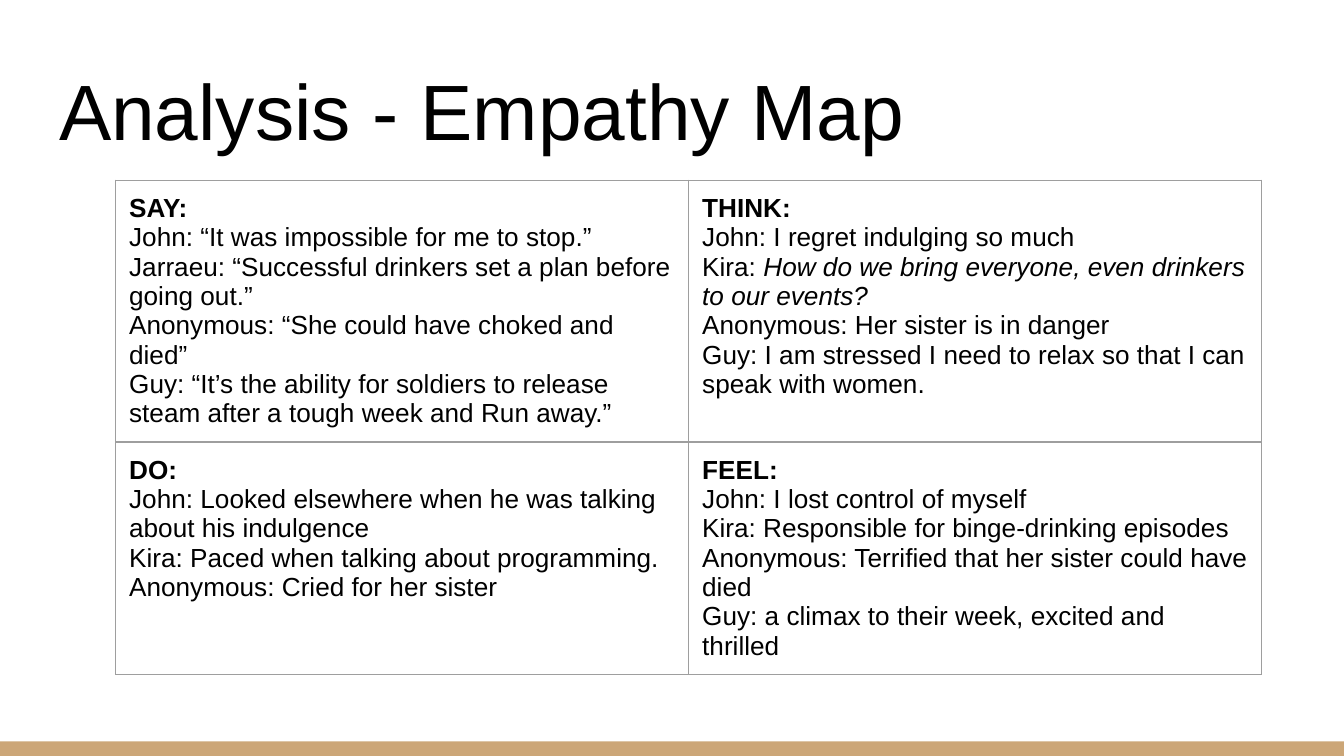
"""Build the empathy map slide: a title above a two-by-two table."""
from lxml import etree
from pptx import Presentation
from pptx import util as u
from pptx.dml import color
from pptx.enum import shapes, text
from pptx.oxml import ns

COLORS = {"ink": "000000", "band": "CCA677", "border": "9E9E9E"}
INSET = u.Pt(7.2)

EMPATHY = [
    [
        ("SAY:", [
            ("John: “It was impossible for me to stop.”", ""),
            ("Jarraeu: “Successful drinkers set a plan before going out.”", ""),
            ("Anonymous: “She could have choked and died”", ""),
            ("Guy: “It’s the ability for soldiers to release steam after a tough week and Run away.”", ""),
        ]),
        ("THINK:", [
            ("John: I regret indulging so much", ""),
            ("Kira: ", "How do we bring everyone, even drinkers to our events?"),
            ("Anonymous: Her sister is in danger", ""),
            ("Guy: I am stressed I need to relax so that I can speak with women.", ""),
        ]),
    ],
    [
        ("DO:", [
            ("John: Looked elsewhere when he was talking about his indulgence", ""),
            ("Kira: Paced when talking about programming.", ""),
            ("Anonymous: Cried for her sister", ""),
        ]),
        ("FEEL:", [
            ("John: I lost control of myself", ""),
            ("Kira: Responsible for binge-drinking episodes", ""),
            ("Anonymous: Terrified that her sister could have died", ""),
            ("Guy: a climax to their week, excited and thrilled", ""),
        ]),
    ],
]


def add_run(paragraph, words, size, bold=False, italic=False):
    run = paragraph.add_run()
    run.text = words
    run.font.name = "Arial"
    run.font.size = u.Pt(size)
    run.font.bold = bold
    run.font.italic = italic
    run.font.color.rgb = color.RGBColor.from_string(COLORS["ink"])


def add_borders(cell):
    properties = cell._tc.get_or_add_tcPr()
    for position, side in enumerate(("a:lnL", "a:lnR", "a:lnT", "a:lnB")):
        line = etree.Element(ns.qn(side), w=str(u.Pt(0.75)))
        fill = etree.SubElement(line, ns.qn("a:solidFill"))
        etree.SubElement(fill, ns.qn("a:srgbClr"), val=COLORS["border"])
        properties.insert(position, line)


deck = Presentation()
deck.slide_width, deck.slide_height = u.Pt(720), u.Pt(405)
slide = deck.slides.add_slide(deck.slide_layouts[5])

band = slide.shapes.add_shape(
    shapes.MSO_SHAPE.RECTANGLE, u.Pt(0), u.Pt(397.2), u.Pt(720), u.Pt(7.8))
band.shadow.inherit = False
band.fill.solid()
band.fill.fore_color.rgb = color.RGBColor.from_string(COLORS["band"])
band.line.fill.background()

title = slide.shapes.title
title.left, title.top, title.width, title.height = (
    u.Pt(24.5), u.Pt(25.2), u.Pt(671), u.Pt(65.5))
heading = title.text_frame
heading.word_wrap = True
heading.auto_size = text.MSO_AUTO_SIZE.NONE
heading.vertical_anchor = text.MSO_ANCHOR.BOTTOM
heading.margin_left = heading.margin_right = INSET
heading.margin_top = heading.margin_bottom = INSET
heading.paragraphs[0].alignment = text.PP_ALIGN.LEFT
add_run(heading.paragraphs[0], "Analysis - Empathy Map", 42)

grid = slide.shapes.add_table(
    2, 2, u.Pt(62), u.Pt(96.5), u.Pt(614), u.Pt(250.5)).table
grid.first_row = grid.horz_banding = False
for row, height in zip(grid.rows, (137.5, 113)):
    row.height = u.Pt(height)
for column in grid.columns:
    column.width = u.Pt(307)

for row, quadrants in zip(grid.rows, EMPATHY):
    for cell, (label, quotes) in zip(row.cells, quadrants):
        cell.fill.background()
        cell.margin_left = cell.margin_right = INSET
        cell.margin_top = cell.margin_bottom = INSET
        add_borders(cell)
        add_run(cell.text_frame.paragraphs[0], label, 14, bold=True)
        for spoken, thought in quotes:
            paragraph = cell.text_frame.add_paragraph()
            add_run(paragraph, spoken, 14)
            if thought:
                add_run(paragraph, thought, 14, italic=True)

deck.save("out.pptx")
